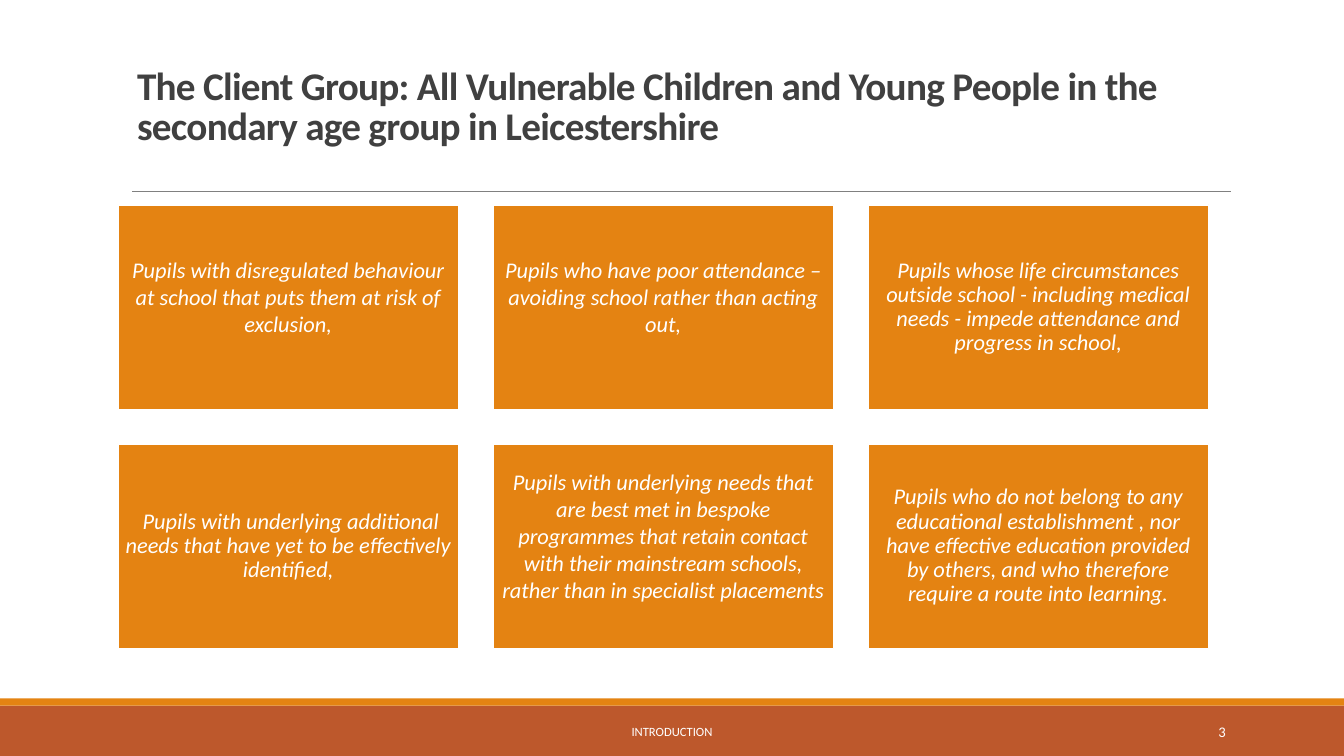
"""Build the client group slide with six cards and a footer band."""
from dataclasses import dataclass

from lxml.etree import SubElement
from pptx import Presentation
from pptx.dml.color import RGBColor
from pptx.enum.shapes import MSO_CONNECTOR, MSO_SHAPE
from pptx.enum.text import MSO_ANCHOR, MSO_AUTO_SIZE, PP_ALIGN
from pptx.oxml.ns import qn
from pptx.shapes.autoshape import Shape
from pptx.slide import Slide
from pptx.util import Cm, Pt

COLORS = {"orange": "E48312", "rust": "BD582C", "rule": "808080",
          "title": "404040", "white": "FFFFFF"}
FONT = "Calibri"
COLUMNS = 3
CARD_LEFT, CARD_TOP = 2.97, 5.16
CARD_WIDTH, CARD_HEIGHT = 8.59, 5.16
CARD_GAP = 0.86
CARD_INSET, RAISED_INSET = 0.18, 0.71


@dataclass(frozen=True)
class Box:
    left: float
    top: float
    width: float
    height: float


@dataclass(frozen=True)
class Card:
    text: str
    raised: bool = False


CARDS = [
    Card("Pupils with disregulated behaviour at school that puts them at risk of exclusion,", True),
    Card("Pupils who have poor attendance – avoiding school rather than acting out,", True),
    Card("Pupils whose life circumstances outside school - including medical needs - "
         "impede attendance and progress in school,"),
    Card(" Pupils with underlying additional needs that have yet to be effectively identified,"),
    Card("Pupils with underlying needs that are best met in bespoke programmes that retain "
         "contact with their mainstream schools, rather than in specialist placements", True),
    Card("Pupils who do not belong to any educational establishment , nor have effective "
         "education provided by others, and who therefore require a route into learning."),
]


def color(name: str) -> RGBColor:
    """Return the named palette color."""
    return RGBColor.from_string(COLORS[name])


def write_text(shape: Shape, text: str, *, size: float, fill: str = "white",
               align: PP_ALIGN = PP_ALIGN.CENTER, bold: bool = False,
               italic: bool = False, line_spacing: float = 1.0) -> None:
    """Write one formatted, vertically centred paragraph."""
    frame = shape.text_frame
    frame.auto_size = MSO_AUTO_SIZE.NONE
    frame.word_wrap = True
    frame.vertical_anchor = MSO_ANCHOR.MIDDLE
    paragraph = frame.paragraphs[0]
    paragraph.alignment = align
    paragraph.line_spacing = line_spacing
    run = paragraph.add_run()
    run.text = text
    run.font.name = FONT
    run.font.size = Pt(size)
    run.font.bold = bold
    run.font.italic = italic
    run.font.color.rgb = color(fill)


def lengths(box: Box) -> tuple[Cm, Cm, Cm, Cm]:
    """Convert a box to slide lengths."""
    return Cm(box.left), Cm(box.top), Cm(box.width), Cm(box.height)


def add_rectangle(slide: Slide, box: Box, fill: str, outline: str | None = None) -> Shape:
    """Add a flat rectangle."""
    shape = slide.shapes.add_shape(MSO_SHAPE.RECTANGLE, *lengths(box))
    shape.shadow.inherit = False
    shape.fill.solid()
    shape.fill.fore_color.rgb = color(fill)
    if outline:
        shape.line.color.rgb = color(outline)
        shape.line.width = Pt(1.25)
    else:
        shape.line.fill.background()
    return shape


def add_title(slide: Slide) -> None:
    """Place the title and the rule below it."""
    title = slide.shapes.title
    title.left, title.top, title.width, title.height = lengths(Box(3.2, 0.71, 27.94, 4.04))
    write_text(title, "The Client Group: All Vulnerable Children and Young People in the "
               "secondary age group in Leicestershire", size=28, fill="title",
               align=PP_ALIGN.LEFT, bold=True, line_spacing=0.85)
    title.text_frame.paragraphs[0].runs[0].font._element.set("spc", "-50")
    rule = slide.shapes.add_connector(
        MSO_CONNECTOR.STRAIGHT, Cm(3.33), Cm(4.83), Cm(31.01), Cm(4.83))
    rule.line.color.rgb = color("rule")
    rule.line.width = Pt(0.5)
    SubElement(rule._element.spPr, qn("a:effectLst"))


def add_card(slide: Slide, index: int, card: Card) -> None:
    """Add a card at its place in the grid."""
    row, column = divmod(index, COLUMNS)
    box = Box(CARD_LEFT + column * (CARD_WIDTH + CARD_GAP),
              CARD_TOP + row * (CARD_HEIGHT + CARD_GAP), CARD_WIDTH, CARD_HEIGHT)
    shape = add_rectangle(slide, box, "orange", "white")
    frame = shape.text_frame
    frame.margin_left = frame.margin_right = frame.margin_top = Cm(CARD_INSET)
    frame.margin_bottom = Cm(RAISED_INSET if card.raised else CARD_INSET)
    write_text(shape, card.text, size=16, italic=True,
               line_spacing=1.0 if card.raised else 0.9)


def add_footer(slide: Slide) -> None:
    """Add the footer bands, section name and slide number."""
    add_rectangle(slide, Box(0, 17.78, 33.87, 1.27), "rust")
    add_rectangle(slide, Box(0, 17.6, 33.87, 0.18), "orange")
    section = slide.shapes.add_textbox(*lengths(Box(10.24, 17.93, 13.39, 1.02)))
    write_text(section, "INTRODUCTION", size=9)
    number = slide.shapes.add_textbox(*lengths(Box(27.51, 17.93, 3.63, 1.02)))
    write_text(number, "3", size=10.5, align=PP_ALIGN.RIGHT)


def main() -> None:
    """Create and save the presentation."""
    presentation = Presentation()
    presentation.slide_width, presentation.slide_height = Cm(33.87), Cm(19.05)
    slide = presentation.slides.add_slide(presentation.slide_layouts[5])
    add_title(slide)
    for index, card in enumerate(CARDS):
        add_card(slide, index, card)
    add_footer(slide)
    presentation.save("out.pptx")


if __name__ == "__main__":
    main()
